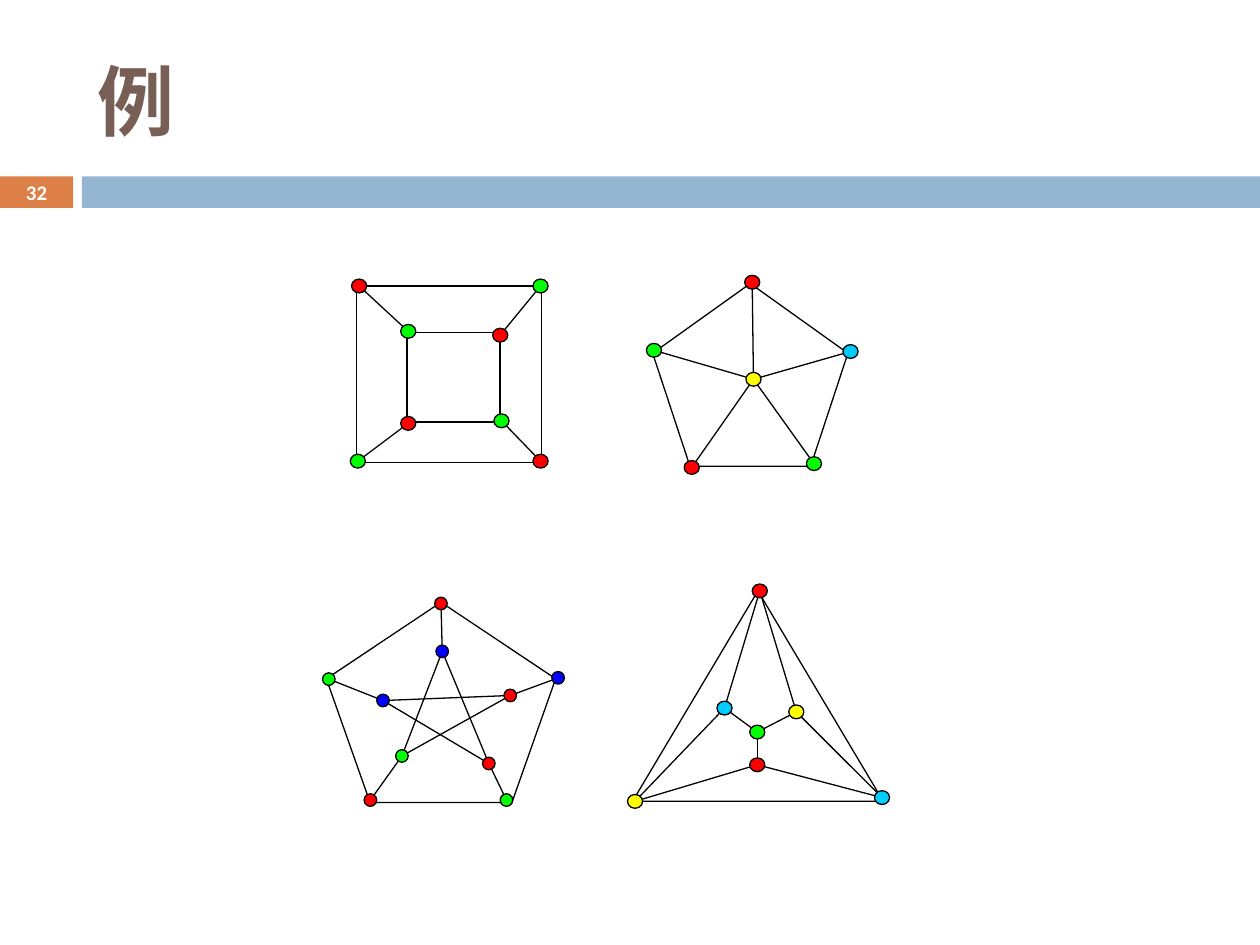
from lxml import etree
from pptx import Presentation
from pptx.dml.color import RGBColor
from pptx.enum.shapes import MSO_CONNECTOR, MSO_SHAPE
from pptx.enum.text import MSO_ANCHOR, PP_ALIGN
from pptx.oxml.ns import qn
from pptx.util import Inches, Pt

RECT, OVAL = MSO_SHAPE.RECTANGLE, MSO_SHAPE.OVAL
PENTA, TRI = MSO_SHAPE.REGULAR_PENTAGON, MSO_SHAPE.ISOSCELES_TRIANGLE
LINE = MSO_CONNECTOR.STRAIGHT
MIDDLE, LEFT, CENTER = MSO_ANCHOR.MIDDLE, PP_ALIGN.LEFT, PP_ALIGN.CENTER
BLACK, WHITE = "000000", "FFFFFF"
RED, GREEN, BLUE = "FF0000", "00FF00", "0000FF"
CYAN, YELLOW = "00CCFF", "FFFF00"


def color(code):
    return RGBColor.from_string(code)


def add_shape(slide, kind, box, fill, line=None):
    shape = slide.shapes.add_shape(kind, *map(Inches, box))
    shape.shadow.inherit = False
    shape.fill.solid()
    shape.fill.fore_color.rgb = color(fill)
    if line:
        shape.line.color.rgb = color(line)
        shape.line.width = Pt(0.75)
    else:
        shape.line.fill.background()
    return shape


def add_edge(slide, start, end):
    edge = slide.shapes.add_connector(LINE, *map(Inches, start + end))
    edge.line.color.rgb = color(BLACK)
    edge.line.width = Pt(0.75)
    etree.SubElement(edge._element.spPr, qn("a:effectLst"))


def set_text(shape, text, size, code, align):
    frame = shape.text_frame
    frame.text = text
    frame.word_wrap = True
    frame.vertical_anchor = MIDDLE
    para = frame.paragraphs[0]
    para.alignment = align
    font = para.runs[0].font
    font.name, font.size, font.bold = "Calibri", Pt(size), True
    font.color.rgb = color(code)


def add_header(slide, box, text, number):
    left, top, width, height = box
    tab, gap, band, band_top = 0.58, 0.07, 0.25, 1.4
    # Number tab and long band
    add_shape(slide, RECT, (left, band_top, tab, band), "DD8047")
    start = left + tab + gap
    add_shape(slide, RECT, (start, band_top, left + width - start, band),
              "94B6D2")
    label = slide.shapes.add_textbox(
        *map(Inches, (left, band_top - 0.01, tab, band + 0.02)))
    set_text(label, number, 11.9, WHITE, CENTER)
    frame = label.text_frame
    frame.margin_left = frame.margin_right = 0
    frame.margin_top = frame.margin_bottom = 0
    # Title
    title = slide.shapes.title
    title.left, title.top = Inches(left + 0.67), Inches(top + 0.25)
    title.width, title.height = Inches(8.92), Inches(1.08)
    set_text(title, text, 44, "775F55", LEFT)


def add_graph(slide, box, kind, nodes, edges, size=(0.12, 0.11), inner=None):
    """Nodes are (x, y, colour) from the box corner; edges pair their indexes."""
    left, top = box[:2]
    # Outlines
    add_shape(slide, kind, box, WHITE, BLACK)
    if inner:
        x, y, width, height = inner
        add_shape(slide, kind, (left + x, top + y, width, height), WHITE, BLACK)
    # Edges run between node centres, under the nodes
    spots = [(left + x, top + y) for x, y, _ in nodes]
    for start, end in edges:
        add_edge(slide, spots[start], spots[end])
    # Nodes
    width, height = size
    for (x, y), (_, _, fill) in zip(spots, nodes):
        add_shape(slide, OVAL, (x - width / 2, y - height / 2, width, height),
                  fill, BLACK)


def add_cube(slide, box):
    nodes = [(0.02, 0, RED), (1.46, 0, GREEN),
             (1.46, 1.39, RED), (0.01, 1.39, GREEN),
             (0.41, 0.36, GREEN), (1.14, 0.39, RED),
             (1.15, 1.07, GREEN), (0.41, 1.09, RED)]
    edges = [(i, i + 4) for i in range(4)]
    add_graph(slide, box, RECT, nodes, edges, inner=(0.4, 0.37, 0.74, 0.71))


def add_wheel(slide, box):
    nodes = [(0.79, -0.01, RED), (1.57, 0.54, CYAN), (1.28, 1.43, GREEN),
             (0.31, 1.46, RED), (0.01, 0.53, GREEN), (0.8, 0.76, YELLOW)]
    hub = 5
    add_graph(slide, box, PENTA, nodes, [(i, hub) for i in range(hub)])


def add_star(slide, box):
    # Outer ring, then inner ring, both clockwise from the top
    nodes = [(0.91, 0.01, RED), (1.84, 0.6, BLUE), (1.43, 1.57, GREEN),
             (0.35, 1.57, RED), (0.02, 0.61, GREEN),
             (0.92, 0.39, BLUE), (1.46, 0.74, RED), (1.29, 1.28, RED),
             (0.6, 1.22, GREEN), (0.45, 0.78, BLUE)]
    spokes = [(i, i + 5) for i in range(5)]
    star = [(i + 5, (i + 2) % 5 + 5) for i in range(5)]
    add_graph(slide, box, PENTA, nodes, spokes + star, size=(0.1, 0.1))


def add_triangle(slide, box):
    nodes = [(1.01, 0, RED), (0.02, 1.67, YELLOW), (1.98, 1.64, CYAN),
             (0.99, 1.12, GREEN), (0.99, 1.38, RED),
             (0.73, 0.93, CYAN), (1.3, 0.96, YELLOW)]
    edges = [(1, 4), (4, 2), (0, 5), (5, 1), (0, 6), (6, 2),
             (3, 4), (3, 5), (3, 6)]
    add_graph(slide, box, TRI, nodes, edges)


def main():
    deck = Presentation()
    deck.slide_width, deck.slide_height = Inches(10), Inches(7.5)
    slide = deck.slides.add_slide(deck.slide_layouts[5])
    add_header(slide, (0, 0, 10, 1.65), "例", "32")
    add_cube(slide, (2.83, 2.27, 1.47, 1.4))
    add_wheel(slide, (5.18, 2.25, 1.55, 1.45))
    add_star(slide, (2.59, 4.78, 1.82, 1.59))
    add_triangle(slide, (5.02, 4.69, 1.99, 1.67))
    deck.save("out.pptx")


if __name__ == "__main__":
    main()
